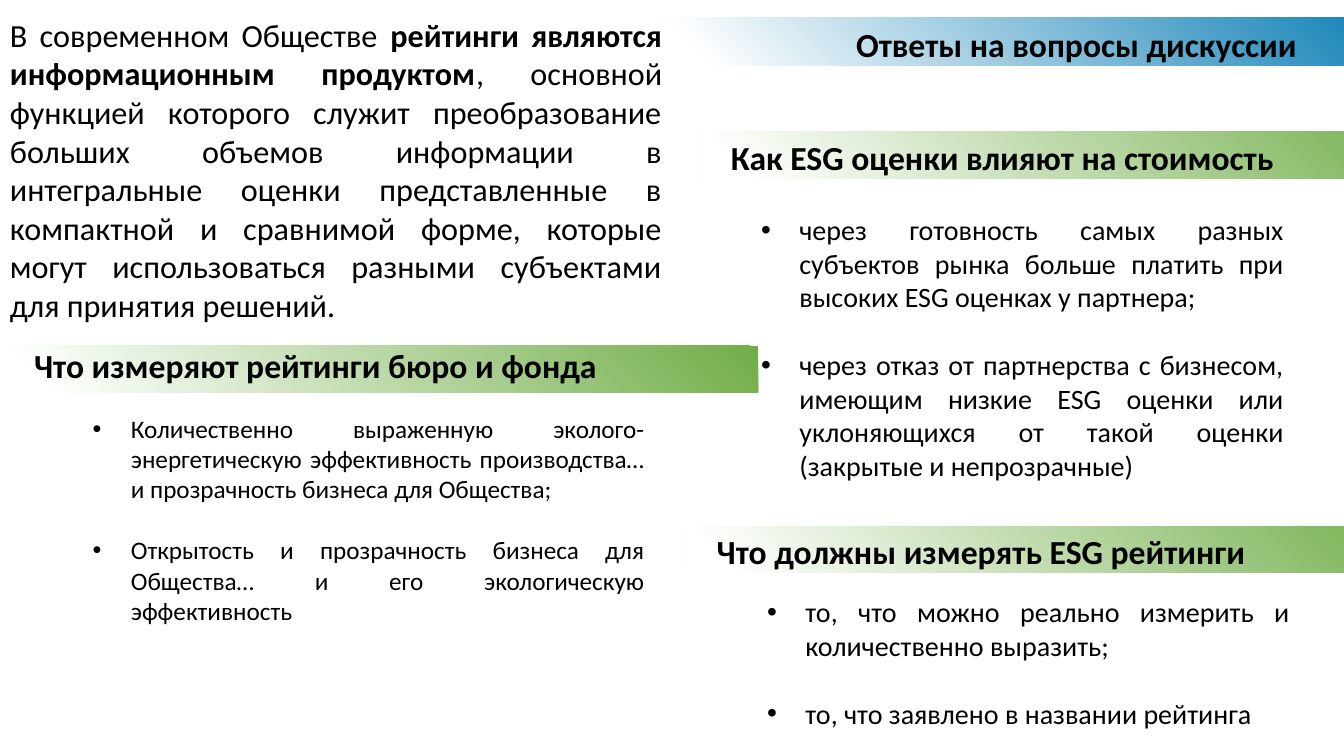
from pptx import Presentation
from pptx import util as u
from pptx import oxml
from pptx.dml import color
from pptx.enum import shapes, text
from pptx.oxml import ns

BLACK = color.RGBColor(0x00, 0x00, 0x00)
WHITE = color.RGBColor(0xFF, 0xFF, 0xFF)
GREEN = color.RGBColor(0x70, 0xAD, 0x47)
BLUE = color.RGBColor(0x1F, 0x88, 0xBA)
FONT = "Calibri"
LINE = 1.22
JUST = text.PP_ALIGN.JUSTIFY


def add_bar(slide, x, y, w, h, tint, flip=False):
    bar = slide.shapes.add_shape(
        shapes.MSO_SHAPE.RECTANGLE, *map(u.Inches, (x, y, w, h)))
    bar.shadow.inherit = False
    bar.line.fill.background()
    stops = "".join(
        f'<a:gs pos="{pos * 1000}"><a:srgbClr val="{shade}"/></a:gs>'
        for pos, shade in ((0, WHITE), (6, WHITE), (100, tint)))
    props = bar._element.spPr
    props.insert(2, oxml.parse_xml(
        f'<a:gradFill {ns.nsdecls("a")} rotWithShape="1">'
        f'<a:gsLst>{stops}</a:gsLst><a:path path="circle">'
        '<a:fillToRect t="100000" r="100000"/></a:path></a:gradFill>'))
    if flip:
        props.xfrm.set("flipH", "1")


def add_box(slide, x, y, w, h):
    frame = slide.shapes.add_textbox(*map(u.Inches, (x, y, w, h))).text_frame
    frame.word_wrap = True
    frame.auto_size = text.MSO_AUTO_SIZE.SHAPE_TO_FIT_TEXT
    return frame


def add_run(para, words, size=24, bold=False, align=None):
    if align is not None:
        para.alignment = align
    run = para.add_run()
    run.text = words
    font = run.font
    font.name, font.size, font.bold = FONT, u.Pt(size), bold
    font.color.rgb = BLACK


def add_head(slide, words, x, y, w=6.67, align=None):
    frame = add_box(slide, x, y, w, 0.5)
    add_run(frame.paragraphs[0], words, bold=True, align=align)


def add_list(slide, items, x, y, w, h, size):
    frame = add_box(slide, x, y, w, h)
    for i, words in enumerate(items):
        para = frame.add_paragraph() if i else frame.paragraphs[0]
        props = para._p.get_or_add_pPr()
        props.set("marL", str(u.Inches(0.38)))
        props.set("indent", str(u.Inches(-0.38)))
        for tag in ('buFont typeface="Arial"', 'buChar char="•"'):
            props.append(oxml.parse_xml(f'<a:{tag} {ns.nsdecls("a")}/>'))
        if i:
            para.space_before = u.Pt(round(size * LINE, 1))
        add_run(para, words, size=size, align=JUST)


def add_intro(slide):
    para = add_box(slide, 0, 0.1, 6.67, 3.2).paragraphs[0]
    for words, bold in (
            ("В современном Обществе ", False),
            ("рейтинги являются информационным продуктом", True),
            (", основной функцией которого служит преобразование больших "
             "объемов информации в интегральные оценки представленные в "
             "компактной и сравнимой форме, которые могут использоваться "
             "разными субъектами для принятия решений.", False)):
        add_run(para, words, size=23, bold=bold, align=JUST)


def main():
    deck = Presentation()
    deck.slide_width, deck.slide_height = u.Inches(13.33), u.Inches(7.5)
    slide = deck.slides.add_slide(deck.slide_layouts[6])

    for x, y in ((0, 3.43), (6.77, 5.22), (6.91, 1.31)):
        add_bar(slide, x, y, 7.52, 0.46, GREEN, flip=True)
    add_bar(slide, 6.58, 0.17, 6.75, 0.48, BLUE)

    add_intro(slide)
    add_head(slide, "Ответы на вопросы дискуссии", 6.49, 0.19, w=6.47,
             align=text.PP_ALIGN.RIGHT)
    add_head(slide, "Что измеряют рейтинги бюро и фонда", 0.24, 3.37)
    add_head(slide, "Как ESG оценки влияют на стоимость", 7.15, 1.31)
    add_head(slide, "Что должны измерять ESG рейтинги", 7.01, 5.22)

    add_list(slide, (
        "Количественно выраженную эколого- энергетическую эффективность "
        "производства… и прозрачность бизнеса для Общества;",
        "Открытость и прозрачность бизнеса для Общества… и его "
        "экологическую эффективность"), 0.82, 4.05, 5.67, 2.22, 18)
    add_list(slide, (
        "через готовность самых разных субъектов рынка больше платить при "
        "высоких ESG оценках у партнера;",
        "через отказ от партнерства с бизнесом, имеющим низкие ESG оценки "
        "или уклоняющихся от такой оценки (закрытые и непрозрачные)"),
        7.45, 2.06, 5.38, 2.79, 20)
    add_list(slide, (
        "то, что можно реально измерить и количественно выразить;",
        "то, что заявлено в названии рейтинга"), 7.51, 5.85, 5.38, 1.45, 20)

    deck.save("out.pptx")


if __name__ == "__main__":
    main()
